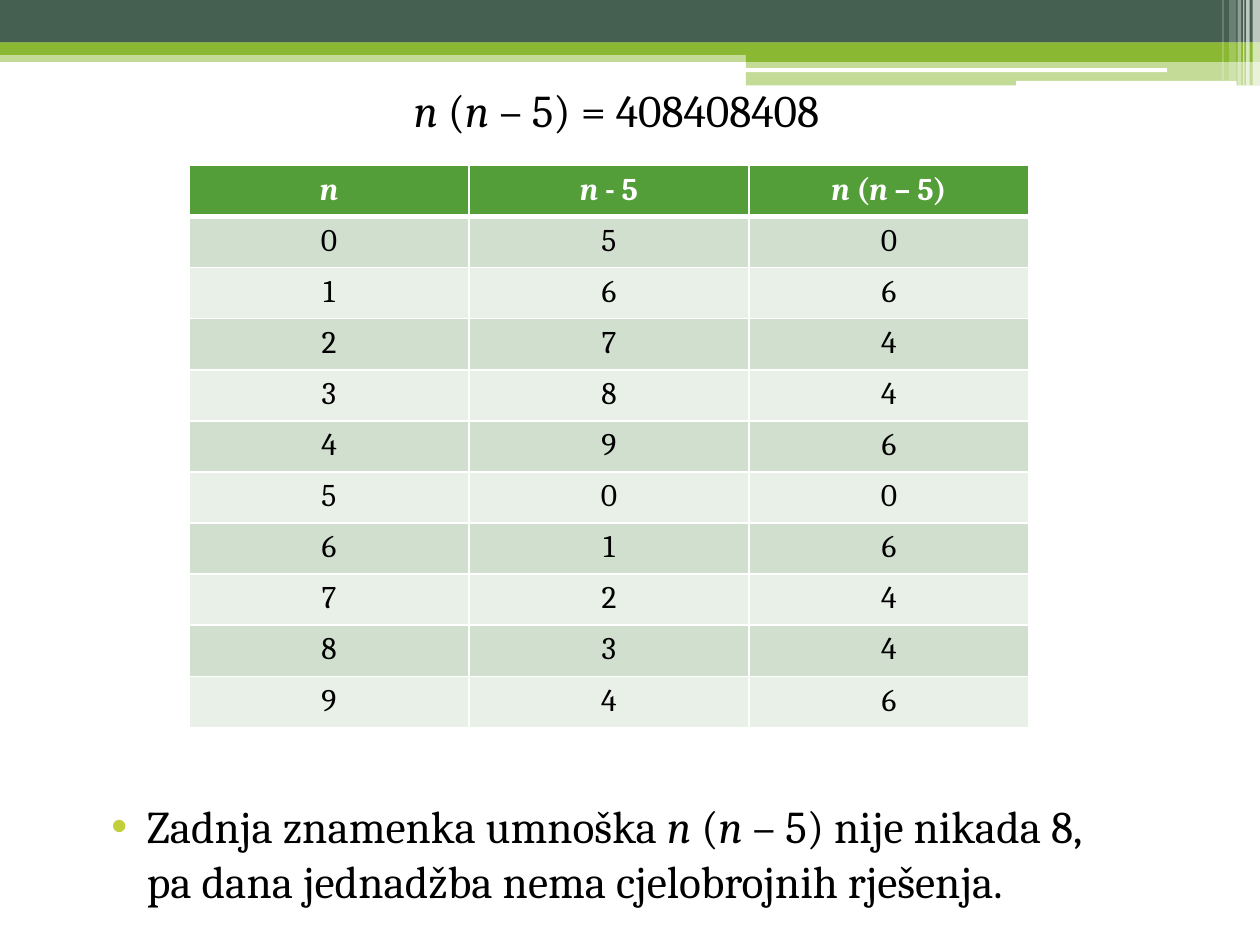
from lxml import etree
from pptx import Presentation
from pptx.dml.color import RGBColor
from pptx.enum.shapes import MSO_SHAPE
from pptx.enum.text import PP_ALIGN
from pptx.oxml.ns import qn
from pptx.util import Pt

RECT, ROUND = MSO_SHAPE.RECTANGLE, MSO_SHAPE.ROUNDED_RECTANGLE
CENTER, LEFT = PP_ALIGN.CENTER, PP_ALIGN.LEFT
FONT = "Cambria"
C = {"dark": "455F51", "green": "8AB833", "white": "FFFFFF", "black": "000000",
     "head": "549E39", "odd": "D1DFCE", "even": "E9F0E8", "bullet": "C0CF3A"}


def rgb(name):
    return RGBColor.from_string(C[name])


def add_runs(p, text, size, color, bold=False):
    """Add text run by run; every piece between asterisks is italic."""
    for i, piece in enumerate(text.split("*")):
        if piece:
            r = p.add_run()
            r.text = piece
            f = r.font
            f.name, f.size, f.bold, f.italic = FONT, Pt(size), bold, i % 2 == 1
            f.color.rgb = rgb(color)


def add_band(s, box, color, alpha=100, kind=RECT):
    sp = s.shapes.add_shape(kind, *map(Pt, box))
    sp.shadow.inherit = False
    sp.line.fill.background()
    sp.fill.solid()
    sp.fill.fore_color.rgb = rgb(color)
    if alpha < 100:
        clr = sp.fill._xPr.find(".//" + qn("a:srgbClr"))
        etree.SubElement(clr, qn("a:alpha"), val=str(alpha * 1000))


def add_header(s, x, y, w):
    # Full-width bands, then the stepped part on the right
    step_w = 293.8
    step_x = x + w - step_w
    add_band(s, (x, y + 28.8, w, 6.6), "green", 50)
    add_band(s, (x, y, w, 24.4), "dark")
    add_band(s, (x, y + 24.2, w, 7.2), "green")
    add_band(s, (step_x, y + 28.2, step_w, 7.2), "green")
    add_band(s, (step_x, y + 35.2, step_w, 13.6), "green", 50)
    # White slits
    add_band(s, (step_x - 0.5, y + 39, 241.2, 2.2), "white", kind=ROUND)
    add_band(s, (x + w - 139.4, y + 46.3, 126, 2.9), "white", kind=ROUND)
    # Translucent stripes: distance from the right edge, width, height, alpha
    for dx, sw, sh, alpha in [(4.2, 4.2, 48.8, 65), (7.9, 2, 48.8, 65),
                              (9.6, 0.7, 48.8, 60), (12.8, 2, 48.8, 40),
                              (17.6, 4, 46.1, 20), (21.5, 0.7, 46.1, 30)]:
        add_band(s, (x + w - dx, y, sw, sh), "white", alpha)


def add_statement(s, box, text, align, margin, indent=0, bullet=False):
    tf = s.shapes.add_textbox(*map(Pt, box)).text_frame
    tf.word_wrap = True
    p = tf.paragraphs[0]
    p.alignment, p.space_before = align, Pt(3)
    pPr = p._p.get_or_add_pPr()
    pPr.set("marL", str(Pt(margin)))
    pPr.set("indent", str(Pt(indent)))
    if bullet:
        clr = etree.SubElement(pPr, qn("a:buClr"))
        etree.SubElement(clr, qn("a:srgbClr"), val=C["bullet"])
        etree.SubElement(pPr, qn("a:buFont"), typeface="Arial")
        etree.SubElement(pPr, qn("a:buChar"), char="•")
    add_runs(p, text, 25.9, "black")


def set_borders(cell, top, bottom):
    tcPr = cell._tc.get_or_add_tcPr()
    for side, width in [("L", 1), ("R", 1), ("T", top), ("B", bottom)]:
        ln = etree.SubElement(tcPr, qn("a:ln" + side), w=str(Pt(width)))
        fill = etree.SubElement(ln, qn("a:solidFill"))
        etree.SubElement(fill, qn("a:srgbClr"), val=C["white"])


def add_digit_table(s, x, y, w, h):
    # Last digits of n, n - 5 and their product
    rows = [["*n*", "*n* - 5", "*n* (*n* – 5)"]]
    rows += [[str(v % 10) for v in (n, n - 5, n * (n - 5))] for n in range(10)]
    table = s.shapes.add_table(len(rows), 3, Pt(x), Pt(y), Pt(w), Pt(h)).table
    for col in table.columns:
        col.width = Pt(w / 3)
    for i, values in enumerate(rows):
        table.rows[i].height = Pt(h / len(rows))
        head = i == 0
        for j, value in enumerate(values):
            cell = table.cell(i, j)
            set_borders(cell, 3 if i == 1 else 1, 3 if head else 1)
            cell.fill.solid()
            cell.fill.fore_color.rgb = rgb("head" if head else "odd" if i % 2 else "even")
            p = cell.text_frame.paragraphs[0]
            p.alignment = CENTER
            add_runs(p, value, 18, "white" if head else "black", head)


def main():
    prs = Presentation()
    prs.slide_width, prs.slide_height = Pt(720), Pt(540)
    s = prs.slides.add_slide(prs.slide_layouts[6])
    add_header(s, 0, 0, 720)
    # Equation above the table, conclusion below it
    add_statement(s, (48, 43.2, 600, 41), "*n* (*n* – 5) = 408408408", CENTER, 8.6)
    add_statement(s, (48, 452.8, 600, 72),
                  "Zadnja znamenka umnoška *n* (*n* – 5) nije nikada 8, "
                  "pa dana jednadžba nema cjelobrojnih rješenja.",
                  LEFT, 28.8, -20.2, bullet=True)
    add_digit_table(s, 108, 94.5, 480, 321.2)
    prs.save("out.pptx")


if __name__ == "__main__":
    main()
